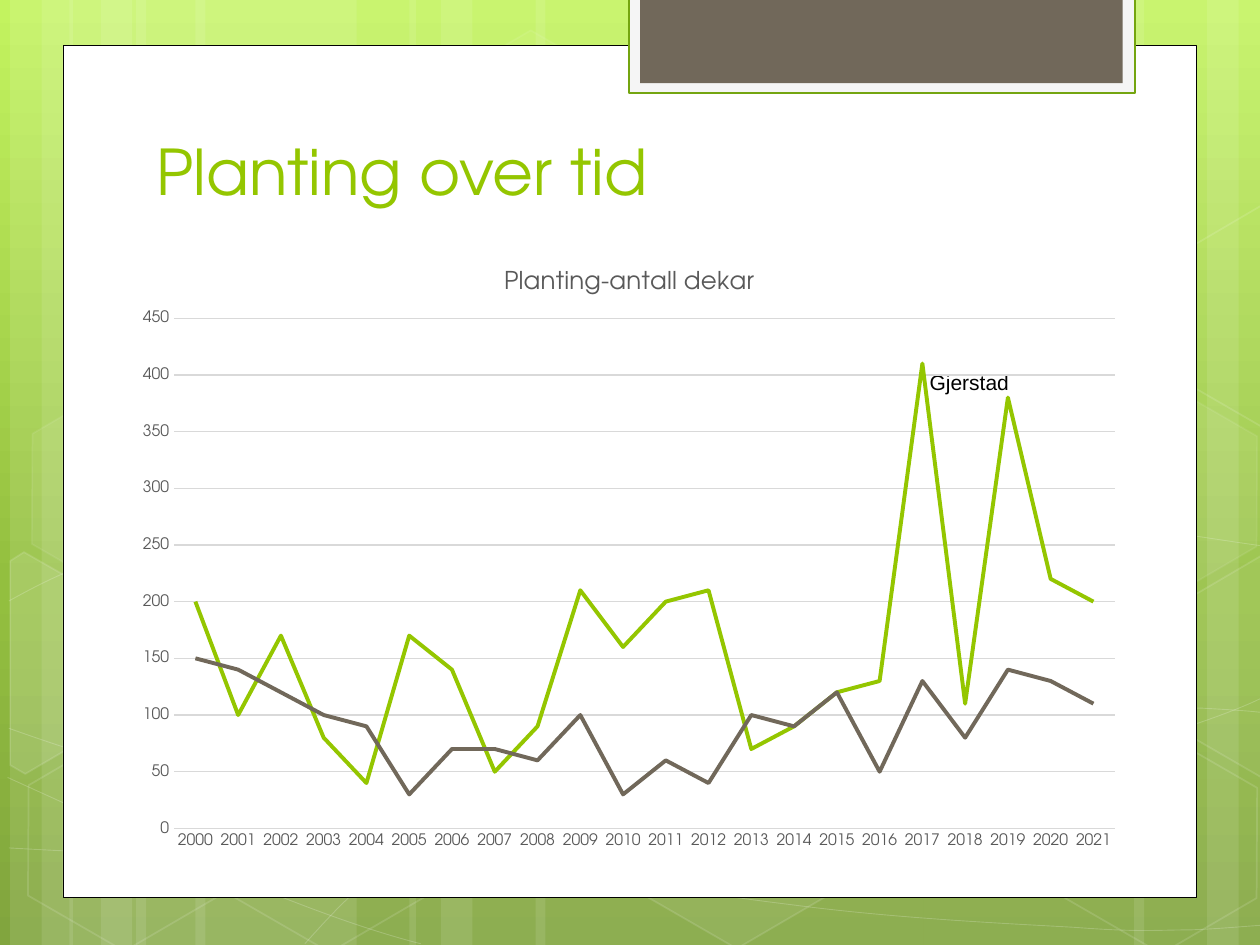
from dataclasses import dataclass
from math import cos, radians, sin
from typing import Optional

from lxml.etree import SubElement
from pptx import Presentation
from pptx.chart.data import CategoryChartData
from pptx.dml.color import RGBColor
from pptx.enum.chart import XL_CHART_TYPE, XL_TICK_MARK
from pptx.enum.shapes import MSO_SHAPE
from pptx.enum.text import MSO_ANCHOR, PP_ALIGN
from pptx.oxml import parse_xml
from pptx.oxml.ns import nsdecls, qn
from pptx.util import Inches, Pt

COLORS = {
    "white": "FFFFFF", "black": "000000", "lime": "94C600",
    "olive": "74A510", "taupe": "71685A", "pale": "F5F5F5",
    "grid": "D9D9D9", "label": "595959",
    "top": "C3F35F", "middle": "93BF3F", "bottom": "81A53E",
}
FONT = "TeX Gyre Adventor"
TILT = 30


@dataclass
class Paint:
    fill: Optional[str] = None
    fill_alpha: int = 100
    line: Optional[str] = None
    width: float = 1
    line_alpha: int = 100


@dataclass
class Box:
    left: float
    top: float
    width: float
    height: float
    paint: Paint
    rotation: int = 0


@dataclass
class Hexagon:
    left: float
    top: float
    fill_alpha: int
    line_alpha: int


@dataclass
class CutHexagon:
    center: tuple
    points: list
    fill_alpha: int = 0


@dataclass
class Curve:
    knots: list
    straight: Optional[int] = None


def rgb(name: str) -> RGBColor:
    return RGBColor.from_string(COLORS[name])


def set_alpha(sp, query: str, percent: int) -> None:
    if percent < 100:
        for color in sp.element.spPr.xpath(query):
            SubElement(color, qn("a:alpha"), val=str(percent * 1000))


def apply_paint(sp, paint: Paint) -> None:
    sp.shadow.inherit = False
    if paint.fill:
        sp.fill.solid()
        sp.fill.fore_color.rgb = rgb(paint.fill)
        set_alpha(sp, "./a:solidFill/a:srgbClr", paint.fill_alpha)
    else:
        sp.fill.background()
    if paint.line:
        sp.line.color.rgb = rgb(paint.line)
        sp.line.width = Pt(paint.width)
        set_alpha(sp, "./a:ln/a:solidFill/a:srgbClr", paint.line_alpha)
    else:
        sp.line.fill.background()


def glass(fill_alpha: int, line_alpha: int) -> Paint:
    return Paint("white" if fill_alpha else None, fill_alpha, "white", 1, line_alpha)


def add_box(s, box: Box) -> None:
    sp = s.shapes.add_shape(MSO_SHAPE.RECTANGLE, Inches(box.left), Inches(box.top),
                            Inches(box.width), Inches(box.height))
    sp.rotation = box.rotation
    apply_paint(sp, box.paint)


def add_hexagon(s, cell: Hexagon) -> None:
    sp = s.shapes.add_shape(MSO_SHAPE.HEXAGON, Inches(cell.left), Inches(cell.top),
                            Inches(1.75), Inches(1.52))
    sp.adjustments[0], sp.adjustments[1] = 0.285, 1.155
    sp.rotation = TILT
    apply_paint(sp, glass(cell.fill_alpha, cell.line_alpha))


def add_freeform(s, points: list, close: bool):
    emu = [(Inches(x), Inches(y)) for x, y in points]
    fb = s.shapes.build_freeform(*emu[0])
    fb.add_line_segments(emu[1:], close=close)
    return fb.convert_to_shape()


def add_cut_hexagon(s, cell: CutHexagon) -> None:
    cx, cy = cell.center
    c, d = cos(radians(TILT)), sin(radians(TILT))
    upright = [(cx + (x - cx) * c + (y - cy) * d, cy - (x - cx) * d + (y - cy) * c)
               for x, y in cell.points]
    sp = add_freeform(s, upright, True)
    sp.rotation = TILT
    apply_paint(sp, glass(cell.fill_alpha, 12))


def add_curve(s, curve: Curve) -> None:
    sp = add_freeform(s, curve.knots, False)
    segments = sp.element.spPr.xpath(".//a:lnTo")
    i = 0
    while i < len(segments):
        if i == curve.straight:
            i += 1
            continue
        bezier = parse_xml(f'<a:cubicBezTo {nsdecls("a")}/>')
        segments[i].addprevious(bezier)
        for segment in segments[i:i + 3]:
            bezier.append(segment[0])
            segment.getparent().remove(segment)
        i += 3
    apply_paint(sp, Paint(line="white", width=0.5, line_alpha=20))


def format_run(r, size: float, color: str, name: str = FONT) -> None:
    r.font.size = Pt(size)
    r.font.name = name
    r.font.color.rgb = rgb(color)


def format_axis(axis) -> None:
    axis.major_tick_mark = axis.minor_tick_mark = XL_TICK_MARK.NONE
    axis.tick_labels.font.size = Pt(9)
    axis.tick_labels.font.name = FONT
    axis.tick_labels.font.color.rgb = rgb("label")


def set_background(s) -> None:
    s.background.fill.solid()
    solid = s.background.fill._xPr.find(qn("a:solidFill"))
    stops = "".join(f'<a:gs pos="{pos * 1000}"><a:srgbClr val="{COLORS[name]}"/></a:gs>'
                    for pos, name in ((0, "top"), (62, "middle"), (100, "bottom")))
    solid.getparent().replace(solid, parse_xml(
        f'<a:gradFill {nsdecls("a")} rotWithShape="1"><a:gsLst>{stops}</a:gsLst>'
        '<a:lin ang="5400000" scaled="0"/></a:gradFill>'))


BANDS = [(1.08, 1.75, 0), (0.08, 0.5, 0), (0.33, 0.83, 0), (1.55, 1.75, 0), (0.55, 0.5, 0),
         (0.8, 0.83, 0), (7.33, 1.75, 180), (9.58, 0.5, 180), (9, 0.83, 180),
         (4.25, 3.08, 0), (3.25, 0.5, 0), (3.5, 0.83, 0)]
CURVES = [
    Curve([(0.07, 6.73), (0.61, 6.76), (1.15, 6.79), (1.9, 6.78), (2.65, 6.77), (3.58, 6.75),
           (4.58, 6.65), (5.58, 6.55), (7, 6.36), (7.92, 6.17), (8.83, 5.98), (9.77, 5.68),
           (10.07, 5.51)]),
    Curve([(0.07, 4.77), (0.36, 4.61), (0.65, 4.46), (1.21, 4.31), (1.78, 4.16), (2.59, 3.94),
           (3.47, 3.87), (4.36, 3.8), (5.44, 3.79), (6.54, 3.87), (7.64, 3.95), (9.47, 4.26),
           (10.07, 4.34)]),
    Curve([(0.06, 6.17), (1.27, 6.72), (2.47, 7.27), (3.34, 7.49)]),
    Curve([(0.07, 5.78), (0.38, 5.89), (0.7, 6), (1.28, 6.16), (1.86, 6.31), (2.73, 6.56),
           (3.57, 6.73), (4.4, 6.9), (5.45, 7.08), (6.28, 7.18), (7.11, 7.29), (8, 7.33),
           (8.53, 7.36), (9.05, 7.4), (9.19, 7.38), (9.45, 7.38), (9.71, 7.37), (9.89, 7.35),
           (10.07, 7.34)]),
    Curve([(2.42, 7.49), (2.6, 7.29), (2.78, 7.09), (3.02, 6.91), (3.26, 6.73), (3.6, 6.53),
           (3.88, 6.39), (4.16, 6.25), (4.33, 6.19), (4.7, 6.09), (5.06, 5.99), (5.73, 5.85),
           (6.08, 5.78), (6.44, 5.71), (6.49, 5.71), (6.8, 5.69), (7.11, 5.66), (7.6, 5.63),
           (7.94, 5.62), (8.29, 5.61), (8.86, 5.62), (8.86, 5.62), (9.53, 5.62),
           (9.71, 5.63), (9.88, 5.64), (9.97, 5.65), (10.06, 5.66), (10.03, 5.65),
           (10.06, 5.66)], straight=21),
]
HONEYCOMB = [
    Hexagon(3.34, 0.36, 4, 8), Hexagon(4.97, 5.89, 6, 12),
    CutHexagon((0.36, 5.35), [(0.08, 4.45), (0.19, 4.38), (0.96, 4.82), (0.95, 5.7),
                              (0.2, 6.14), (0.08, 6.07)], 10),
    Hexagon(0.11, 5.91, 0, 12), Hexagon(0.14, 3.12, 7, 8), Hexagon(1.74, 5.92, 0, 12),
    Hexagon(7.53, 4.53, 10, 12), Hexagon(8.34, 5.93, 0, 12), Hexagon(8.34, 3.14, 7, 8),
    CutHexagon((9.85, 5.2), [(9.26, 4.85), (10.01, 4.41), (10.09, 4.46), (10.09, 6.13),
                             (10.02, 6.17), (9.26, 5.73)], 4),
    CutHexagon((9.85, 2.41), [(9.26, 2.07), (10.01, 1.63), (10.1, 1.68), (10.09, 3.35),
                              (10.02, 3.39), (9.26, 2.95)]),
]
PANELS = [
    Box(0.5, 0.36, 9, 6.76, Paint("white", line="black", width=0.5)),
    Box(4.99, -0.02, 4.02, 0.76, Paint("pale", line="olive", width=1.25)),
    Box(5.08, -0.02, 3.83, 0.68, Paint("taupe")),
]
SERIES = [
    ("Series 1", "lime", [200, 100, 170, 80, 40, 170, 140, 50, 90, 210, 160, 200, 210, 70,
                          90, 120, 130, 410, 110, 380, 220, 200]),
    ("Series 2", "taupe", [150, 140, 120, 100, 90, 30, 70, 70, 60, 100, 30, 60, 40, 100,
                           90, 120, 50, 130, 80, 140, 130, 110]),
]


def add_planting_chart(s) -> None:
    data = CategoryChartData()
    data.categories = [str(year) for year in range(2000, 2022)]
    for name, _, values in SERIES:
        data.add_series(name, values)
    chart = s.shapes.add_chart(XL_CHART_TYPE.LINE, Inches(0.98), Inches(1.94),
                               Inches(8.03), Inches(4.88), data).chart
    chart.font.size, chart.font.name = Pt(10), FONT
    chart.has_legend = False
    r = chart.chart_title.text_frame.paragraphs[0].add_run()
    r.text = "Planting-antall dekar"
    format_run(r, 14, "label")
    r.font.bold = False
    chart.chart_title.include_in_layout = False
    plot = chart.plots[0]
    plot.vary_by_categories = False
    for series, (_, color, _) in zip(plot.series, SERIES):
        series.smooth = False
        series.format.line.color.rgb = rgb(color)
        series.format.line.width = Pt(2.25)
    years, areas = chart.category_axis, chart.value_axis
    format_axis(years)
    format_axis(areas)
    areas.minimum_scale, areas.maximum_scale, areas.major_unit = 0, 450, 50
    areas.format.line.fill.background()
    for line in (years.format.line, areas.major_gridlines.format.line):
        line.color.rgb = rgb("grid")
        line.width = Pt(0.75)
    area = chart.element.find(".//" + qn("c:plotArea"))
    for old in area.findall(qn("c:layout")):
        area.remove(old)
    parts = [("layoutTarget", "inner"), ("xMode", "edge"), ("yMode", "edge"),
             ("x", 0.05), ("y", 0.12), ("w", 0.93), ("h", 0.83)]
    inner = "".join(f'<c:{tag} val="{val}"/>' for tag, val in parts)
    area.insert(0, parse_xml(f'<c:layout {nsdecls("c")}><c:manualLayout>{inner}'
                             '</c:manualLayout></c:layout>'))


def add_text(sp, text: str, size: float, color: str, font: str) -> None:
    tf = sp.text_frame
    tf.word_wrap = True
    p = tf.paragraphs[0]
    p.alignment = PP_ALIGN.LEFT
    r = p.add_run()
    r.text = text
    format_run(r, size, color, font)


def main() -> None:
    prs = Presentation()
    prs.slide_width, prs.slide_height = Inches(10), Inches(7.5)
    s = prs.slides.add_slide(prs.slide_layouts[5])
    set_background(s)
    for left, width, rotation in BANDS:
        add_box(s, Box(left, 0, width, 7.5, Paint("white", 10), rotation))
    for curve in CURVES:
        add_curve(s, curve)
    for cell in HONEYCOMB:
        if isinstance(cell, Hexagon):
            add_hexagon(s, cell)
        else:
            add_cut_hexagon(s, cell)
    for panel in PANELS:
        add_box(s, panel)
    title = s.shapes.title
    title.left, title.top, title.width, title.height = map(Inches, (1.14, 1.12, 7.68, 0.58))
    s.shapes.element.append(title.element)
    add_text(title, "Planting over tid", 36, "lime", FONT)
    title.text_frame.vertical_anchor = MSO_ANCHOR.BOTTOM
    label = s.shapes.add_textbox(Inches(7.28), Inches(2.88), Inches(1.27), Inches(0.3))
    add_text(label, "Gjerstad", 12, "black", "Arial")
    add_planting_chart(s)
    prs.save("out.pptx")


if __name__ == "__main__":
    main()
